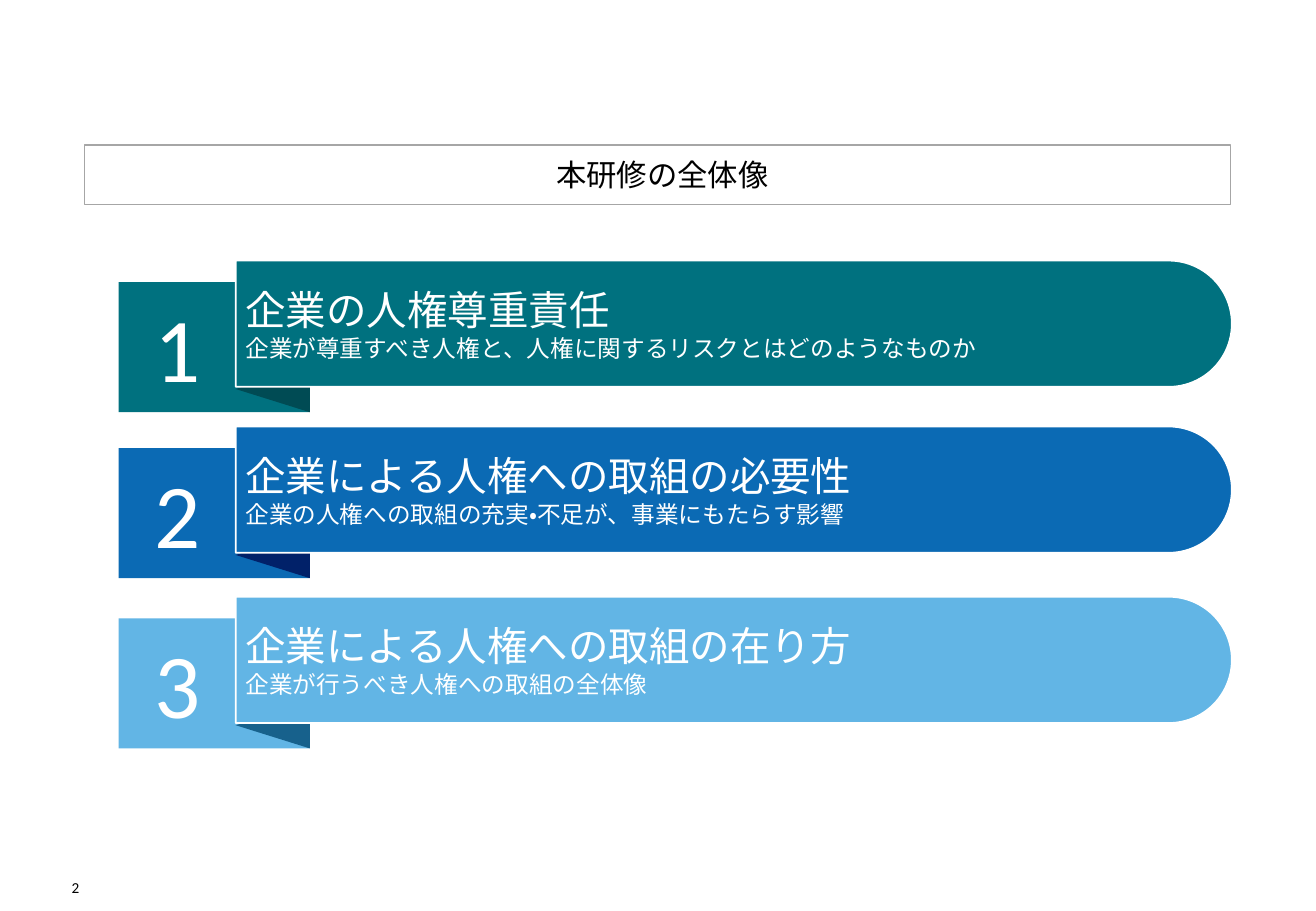
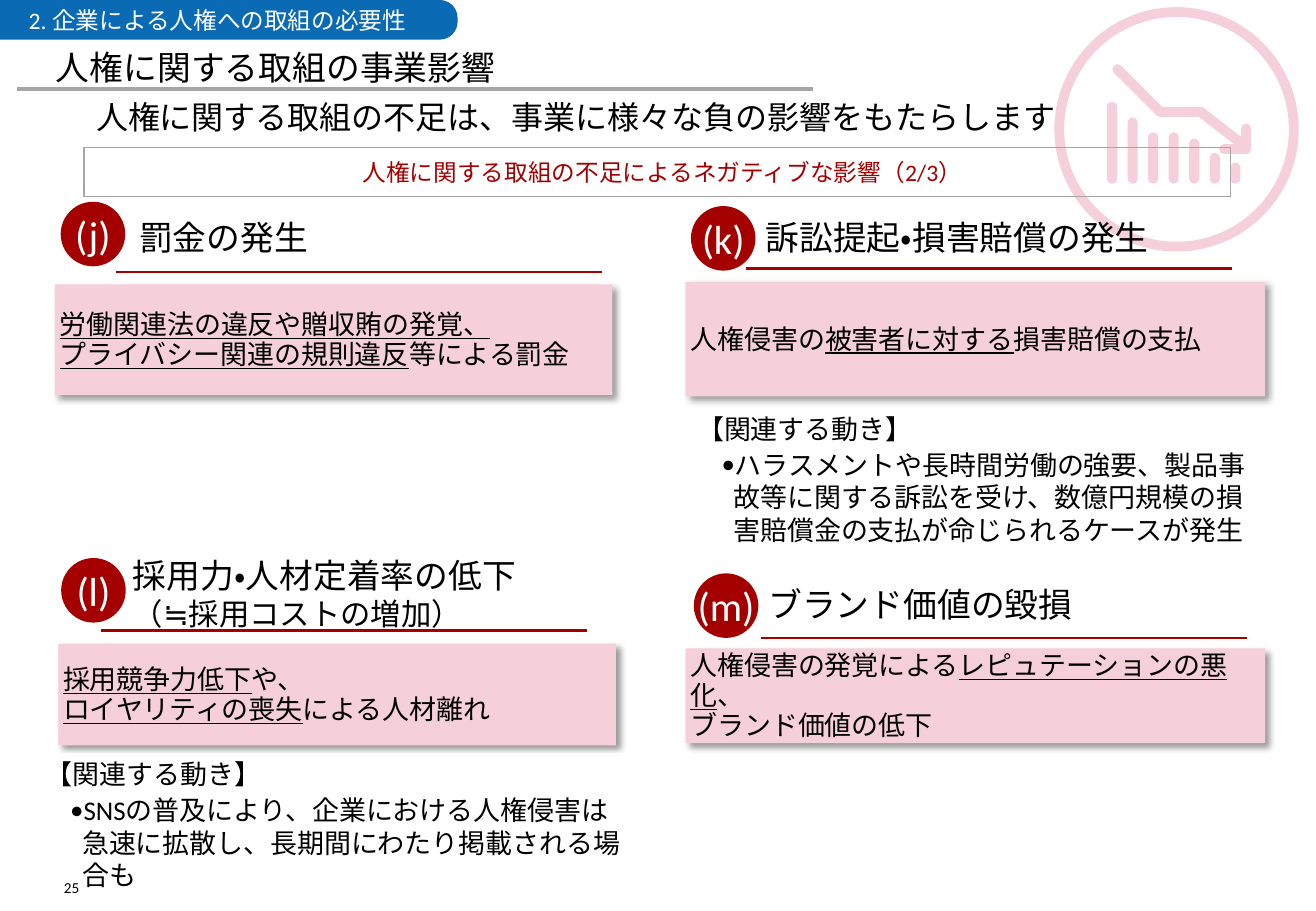
import pptx
import pptx.util
import pptx.dml.color
import pptx.enum.lang
import pptx.enum.shapes
import pptx.enum.text
import pptx.oxml
import pptx.oxml.ns

Cm = pptx.util.Cm
Pt = pptx.util.Pt
SHAPE = pptx.enum.shapes.MSO_SHAPE
ALIGN = pptx.enum.text.PP_ALIGN
ANCHOR = pptx.enum.text.MSO_ANCHOR
FONT = "Calibri"
COLORS = {
    "ink": "000000", "white": "FFFFFF", "gray": "A6A6A6",
    "teal": "00717F", "teal_fold": "004B54",
    "blue": "0B6AB4", "blue_fold": "012169",
    "sky": "62B5E5", "sky_fold": "17618C",
    "red": "A40000", "pink": "F5CFDA",
}
DRAWING = pptx.oxml.ns.nsdecls("a")
SHADOW = (
    f'<a:effectLst {DRAWING}><a:outerShdw blurRad="50800" dist="38100" dir="2700000" '
    'algn="tl" rotWithShape="0"><a:srgbClr val="000000"><a:alpha val="40000"/>'
    '</a:srgbClr></a:outerShdw></a:effectLst>'
)
NO_EFFECT = f"<a:effectLst {DRAWING}/>"
BULLET_FONT = f'<a:buFont {DRAWING} typeface="{FONT}"/>'
BULLET = f'<a:buChar {DRAWING} char="•"/>'

CHAPTERS = [
    (5.45, "teal", "企業の人権尊重責任",
     "企業が尊重すべき人権と、人権に関するリスクとはどのようなものか"),
    (8.92, "blue", "企業による人権への取組の必要性",
     "企業の人権への取組の充実・不足が、事業にもたらす影響"),
    (12.48, "sky", "企業による人権への取組の在り方",
     "企業が行うべき人権への取組の全体像"),
]
IMPACTS = [
    dict(mark="(j)", badge=(1.27, 4.22), heading="罰金の発生",
         heading_at=(2.75, 4.34, 8.36), rule=(2.42, 5.69), panel=(1.15, 5.95, 11.66, 2.31),
         body="_労働関連法の違反や贈収賄の発覚、_\n_プライバシー関連の規則違反_等による罰金"),
    dict(mark="(k)", badge=(14.45, 4.31), heading="訴訟提起・損害賠償の発生",
         heading_at=(15.85, 4.34, 8.79), rule=(15.6, 5.61), panel=(14.34, 5.9, 12.12, 2.39),
         body="人権侵害の_被害者に対する_損害賠償の支払",
         news_at=(14.48, 8.53, 12.12, 3.53),
         news="ハラスメントや長時間労働の強要、製品事故等に関する訴訟を受け、"
              "数億円規模の損害賠償金の支払が命じられるケースが発生"),
    dict(mark="(l)", badge=(1.28, 11.67), heading="採用力・人材定着率の低下",
         subheading="（≒採用コストの増加）", heading_at=(2.62, 11.79, 9.12),
         rule=(2.11, 13.18), panel=(1.22, 13.46, 11.66, 2.13),
         body="_採用競争力低下_や、\n_ロイヤリティの喪失_による人材離れ",
         news_at=(0.86, 15.75, 12.32, 2.26),
         news="SNSの普及により、企業における人権侵害は急速に拡散し、"
              "長期間にわたり掲載される場合も"),
    dict(mark="(m)", badge=(14.51, 11.99), heading="ブランド価値の毀損",
         heading_at=(15.91, 12.01, 8.79), rule=(15.91, 13.34),
         panel=(14.34, 13.56, 12.12, 1.98),
         body="人権侵害の発覚による_レピュテーションの悪化_、\nブランド価値の低下"),
]


def rgb(name):
    return pptx.dml.color.RGBColor.from_string(COLORS[name])


def write(shape, text, size=16, color="ink", align=ALIGN.LEFT, anchor=ANCHOR.MIDDLE,
          inset=0.1, left_inset=None, wrap=True, spacing=None, before=0, margin=0,
          bullet=False):
    frame = shape.text_frame
    frame.auto_size = pptx.enum.text.MSO_AUTO_SIZE.NONE
    frame.word_wrap = wrap
    frame.vertical_anchor = anchor
    frame.margin_left = Cm(inset if left_inset is None else left_inset)
    frame.margin_right = frame.margin_top = frame.margin_bottom = Cm(inset)
    for line in text.split("\n"):
        paragraph = frame.add_paragraph() if frame.text else frame.paragraphs[0]
        properties = paragraph._p.get_or_add_pPr()
        properties.set("marL", str(Cm(margin)))
        properties.set("indent", str(Cm(-0.25 if bullet else 0)))
        properties.set("hangingPunct", "0")
        if bullet:
            properties.append(pptx.oxml.parse_xml(BULLET_FONT))
            properties.append(pptx.oxml.parse_xml(BULLET))
        paragraph.alignment = align
        paragraph.space_before = Pt(before)
        if spacing:
            paragraph.line_spacing = Pt(spacing)
        for index, piece in enumerate(line.split("_")):
            if piece:
                run = paragraph.add_run()
                run.text = piece
                run.font.name = FONT
                run.font.size = Pt(size)
                run.font.color.rgb = rgb(color)
                run.font.underline = index % 2 == 1
                run.font.language_id = pptx.enum.lang.MSO_LANGUAGE_ID.JAPANESE


def outline(shape, color=None, width=0.75):
    if color:
        shape.line.color.rgb = rgb(color)
        shape.line.width = Pt(width)
    else:
        shape.line.fill.background()


def add_block(shapes, kind, box, fill=None, line=None, width=1, adjust=(), rotation=0):
    left, top, wide, high = box
    if rotation in (90, 270):
        left, top = left + (wide - high) / 2, top + (high - wide) / 2
        wide, high = high, wide
    block = shapes.add_shape(kind, Cm(left), Cm(top), Cm(wide), Cm(high))
    block.rotation = rotation
    block.shadow.inherit = False
    if fill:
        block.fill.solid()
        block.fill.fore_color.rgb = rgb(fill)
    else:
        block.fill.background()
    outline(block, line, width)
    for index, value in enumerate(adjust):
        block.adjustments[index] = value
    return block


def add_bar(shapes, box, fill, roundness, line=None):
    bar = add_block(shapes, SHAPE.ROUND_2_SAME_RECTANGLE, box, fill, line,
                    adjust=(roundness, 0), rotation=90)
    bar.text_frame._txBody.bodyPr.set("vert", "vert270")
    return bar


def add_label(shapes, box, text, **style):
    label = shapes.add_textbox(*map(Cm, box))
    write(label, text, **style)


def add_rule(shapes, left, top, length, color, width):
    rule = shapes.add_connector(pptx.enum.shapes.MSO_CONNECTOR.STRAIGHT,
                                Cm(left), Cm(top), Cm(left + length), Cm(top))
    outline(rule, color, width)
    rule._element.spPr.append(pptx.oxml.parse_xml(NO_EFFECT))


def add_stroke(shapes, points, color, width):
    (left, top), *rest = [(Cm(x), Cm(y)) for x, y in points]
    builder = shapes.build_freeform(left, top)
    builder.add_line_segments(rest, close=False)
    stroke = builder.convert_to_shape()
    stroke.shadow.inherit = False
    stroke.fill.background()
    outline(stroke, color, width)
    stroke._element.spPr.find(pptx.oxml.ns.qn("a:ln")).set("cap", "rnd")


def add_page(deck, title, box, number, **style):
    slide = deck.slides.add_slide(deck.slide_layouts[5])
    heading = slide.shapes.title
    heading.left, heading.top, heading.width, heading.height = map(Cm, box)
    write(heading, title, **style)
    add_label(slide.shapes, (1.16, 18.27, 0.5, 0.48), number, size=9, inset=0,
              align=ALIGN.RIGHT, anchor=ANCHOR.BOTTOM)
    return slide


def add_chapter(slide, number, top, color, heading, question):
    shapes = slide.shapes.add_group_shape().shapes
    tab_top = top + 0.45
    add_block(shapes, SHAPE.RECTANGLE, (2.48, tab_top, 3.99, 2.72), color)
    add_block(shapes, SHAPE.ISOSCELES_TRIANGLE, (4.93, tab_top + 1.75, 1.55, 0.97),
              color + "_fold", rotation=270)
    bar = add_bar(shapes, (4.93, top, 20.83, 2.64), color, 0.5, "white")
    write(bar, heading, size=24, color="white", inset=0.2)
    write(bar, question, size=14, color="white", inset=0.2)
    add_label(shapes, (2.67, tab_top - 0.25, 2.11, 3.18), str(number), size=54,
              color="white", align=ALIGN.CENTER, inset=0.2)


def add_decline_icon(slide):
    shapes = slide.shapes.add_group_shape().shapes
    add_block(shapes, SHAPE.DONUT, (22.05, 0.15, 5.11, 5.11), "pink", adjust=(0.04,))
    for index, top in enumerate((2.13, 2.46, 2.77, 2.77, 2.9, 3.2, 3.4)):
        add_block(shapes, SHAPE.ROUNDED_RECTANGLE,
                  (23.15 + 0.43 * index, top, 0.21, 3.84 - top), "pink", adjust=(0.5,))
    trend = [(23.37, 1.45), (24.26, 2.34), (25.11, 2.34), (26.06, 3.08)]
    tip = [(26.06, 2.69), (26.06, 3.12), (25.6, 3.12)]
    for points in (trend, tip):
        add_stroke(shapes, points, "pink", 6)


def add_impact(slide, mark, badge, heading, heading_at, rule, panel, body,
               subheading=None, news_at=None, news=None):
    shapes = slide.shapes
    card = add_block(shapes, SHAPE.RECTANGLE, panel, "pink")
    properties = card._element.spPr
    properties.remove(properties.find(pptx.oxml.ns.qn("a:effectLst")))
    properties.append(pptx.oxml.parse_xml(SHADOW))
    write(card, body, spacing=18)
    label = add_block(shapes, SHAPE.ROUNDED_RECTANGLE, (*heading_at, 1.24))
    write(label, heading, size=20)
    if subheading:
        write(label, subheading, size=18)
    circle = add_block(shapes, SHAPE.OVAL, (*badge, 1.35, 1.35), "red")
    write(circle, mark, size=24, color="white", align=ALIGN.CENTER, inset=0, wrap=False)
    if news:
        note = add_block(shapes, SHAPE.RECTANGLE, news_at, "white")
        write(note, "【関連する動き】", anchor=ANCHOR.TOP)
        write(note, news, anchor=ANCHOR.TOP, before=2, margin=0.76, bullet=True)
    add_rule(shapes, *rule, 10.16, "red", 1.5)


def build_overview(deck):
    slide = add_page(deck, "本研修の全体像", (1.76, 3.03, 23.98, 1.24), "2",
                     size=18, align=ALIGN.CENTER, inset=0, left_inset=0.2)
    outline(slide.shapes.title, "gray")
    for number, chapter in enumerate(CHAPTERS, 1):
        add_chapter(slide, number, *chapter)


def build_impacts(deck):
    slide = add_page(deck, "人権に関する取組の事業影響", (1.17, 0.84, 25.2, 0.99), "25",
                     size=20, anchor=ANCHOR.BOTTOM, inset=0)
    shapes = slide.shapes
    add_decline_icon(slide)
    tag = add_bar(shapes, (0, 0, 9.57, 0.83), "blue", 0.45)
    write(tag, "2. 企業による人権への取組の必要性", size=14, color="white",
          inset=0, margin=0.6)
    add_rule(shapes, 0.36, 1.86, 16.64, "gray", 2.25)
    add_label(shapes, (1.76, 1.9, 24.59, 1.07),
              "人権に関する取組の不足は、事業に様々な負の影響をもたらします",
              size=19, inset=0.25)
    banner = add_block(shapes, SHAPE.RECTANGLE, (1.76, 3.09, 23.98, 1.02),
                       line="gray", width=0.75)
    write(banner, "人権に関する取組の不足によるネガティブな影響（2/3）",
          size=14, color="red", align=ALIGN.CENTER, inset=0, left_inset=0.2)
    for impact in IMPACTS:
        add_impact(slide, **impact)


def main():
    deck = pptx.Presentation()
    deck.slide_width, deck.slide_height = Cm(27.52), Cm(19.05)
    build_overview(deck)
    build_impacts(deck)
    deck.save("out.pptx")


if __name__ == "__main__":
    main()
